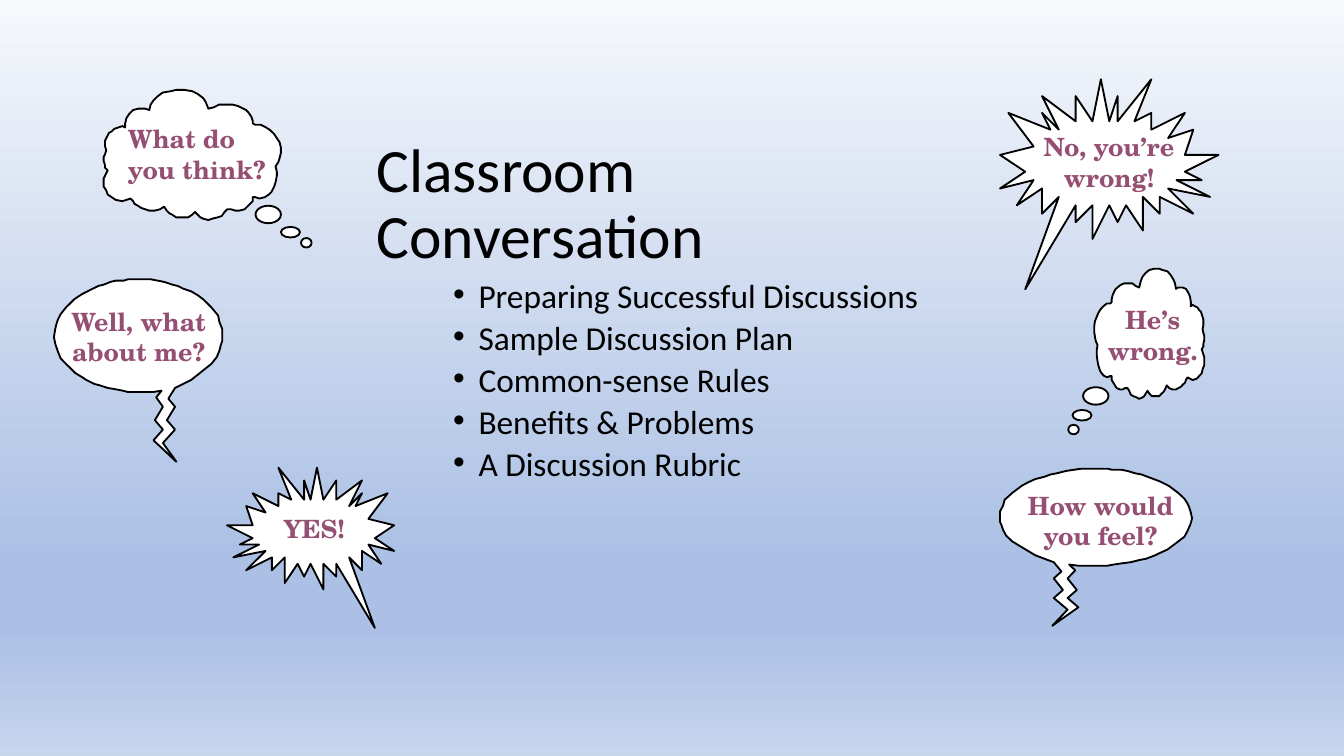
from dataclasses import dataclass

from lxml.etree import SubElement
from pptx import Presentation
from pptx.dml.color import RGBColor
from pptx.enum.shapes import MSO_SHAPE as Shape
from pptx.enum.text import MSO_ANCHOR as Anchor, MSO_AUTO_SIZE as AutoSize, PP_ALIGN as Align
from pptx.oxml.ns import qn
from pptx.util import Cm, Pt


@dataclass(frozen=True)
class Theme:
    ink: str = "000000"
    paper: str = "FFFFFF"
    speech: str = "954F72"
    sky: tuple = ((0, "F6F8FC"), (74, "ABC0E4"), (83, "ABC0E4"), (100, "C7D5ED"))
    main_font: str = "Calibri"
    speech_font: str = "TeX Gyre Schola"
    title_size: float = 33
    body_size: float = 17.9
    speech_size: float = 13.5
    outline: float = 1


@dataclass(frozen=True)
class Box:
    left: float
    top: float
    width: float
    height: float

    def emu(self) -> tuple:
        return Cm(self.left), Cm(self.top), Cm(self.width), Cm(self.height)


@dataclass(frozen=True)
class Bubble:
    outline: tuple
    box: Box
    mirrored: bool
    label: Box
    lines: tuple
    align: Align = Align.CENTER
    dots: tuple = ()


BURST = (
    (4, 8), (1, 4), (6, 6), (5, 4), (7, 6), (5, 2), (9, 5), (9, 2), (11, 5), (12, 0),
    (13, 5), (14, 2), (14, 5), (18, 0), (16, 5), (18, 4), (18, 6), (22, 4), (20, 7), (23, 6),
    (22, 9), (26, 9), (22, 11), (24, 12), (21, 12), (25, 14), (20, 13), (23, 16), (19, 14), (19, 16),
    (17, 14), (17, 18), (15, 15), (14, 17), (13, 15), (11, 19), (11, 15), (9, 17), (9, 15), (3, 25),
    (7, 14), (5, 16), (5, 13), (2, 15), (4, 12), (0, 13), (3, 11), (0, 9),
)
BALLOON = (
    (9, 21), (12, 18), (15, 15), (18, 13), (21, 11), (27, 8), (33, 5), (37, 4), (42, 2), (46, 1),
    (52, 1), (55, 0), (61, 0), (65, 0), (72, 0), (77, 1), (82, 2), (88, 4), (92, 5), (96, 7),
    (102, 9), (107, 12), (111, 15), (114, 18), (117, 21), (122, 27), (123, 32), (125, 37), (125, 41), (125, 46),
    (124, 49), (123, 53), (121, 58), (117, 63), (112, 67), (107, 71), (102, 75), (98, 77), (94, 79), (90, 81),
    (85, 89), (90, 95), (84, 105), (90, 112), (81, 122), (91, 136), (74, 120), (81, 112), (75, 105), (81, 95),
    (76, 88), (80, 83), (74, 84), (69, 84), (64, 84), (59, 84), (55, 84), (51, 83), (46, 82), (40, 81),
    (34, 79), (30, 78), (24, 75), (21, 73), (16, 70), (12, 66), (9, 63), (5, 59), (3, 54), (1, 48),
    (0, 43), (1, 37), (2, 33), (3, 30), (5, 26),
)
CLOUD = (
    (111, 23), (110, 20), (108, 17), (106, 15), (102, 13), (100, 12), (96, 11), (91, 11), (86, 11), (82, 13),
    (78, 14), (76, 9), (74, 6), (70, 3), (66, 1), (60, 0), (54, 0), (50, 1), (44, 2), (40, 5),
    (37, 8), (35, 11), (34, 15), (31, 14), (26, 14), (22, 15), (19, 18), (17, 21), (16, 25), (16, 28),
    (14, 27), (11, 28), (8, 29), (6, 31), (4, 32), (3, 34), (2, 36), (1, 38), (1, 42), (2, 45),
    (1, 48), (0, 50), (0, 53), (1, 56), (1, 58), (3, 60), (1, 64), (0, 66), (0, 72), (2, 75),
    (3, 78), (6, 80), (9, 82), (14, 83), (17, 82), (20, 81), (22, 83), (23, 85), (25, 86), (28, 88),
    (31, 89), (34, 90), (38, 90), (42, 89), (45, 87), (47, 90), (49, 92), (51, 93), (54, 95), (60, 95),
    (63, 95), (66, 93), (68, 91), (70, 93), (72, 95), (74, 96), (78, 97), (81, 96), (85, 95), (88, 94),
    (90, 91), (92, 89), (95, 89), (98, 90), (101, 90), (105, 89), (107, 87), (109, 85), (111, 83), (111, 80),
    (113, 80), (116, 81), (120, 80), (123, 78), (125, 76), (127, 72), (128, 69), (129, 64), (129, 61), (128, 57),
    (130, 54), (131, 51), (132, 47), (132, 43), (131, 39), (129, 36), (127, 33), (124, 30), (121, 28), (117, 26),
    (113, 26), (111, 25),
)
DOT_SIZES = ((0.48, 0.33), (0.36, 0.2), (0.2, 0.18))

BUBBLES = (
    Bubble(BURST, Box(18.9, 1.5, 4.13, 3.97), False,
           Box(19.51, 2.39, 2.9, 1.35), ("No, you’re", "wrong!")),
    Bubble(BURST, Box(4.29, 8.84, 3.16, 3.03), True,
           Box(5.18, 9.6, 1.55, 0.76), ("YES!",), Align.LEFT),
    Bubble(BALLOON, Box(1.02, 5.28, 3.18, 3.45), False,
           Box(1.12, 5.69, 3, 1.35), ("Well, what", "about me?")),
    Bubble(BALLOON, Box(18.9, 8.86, 3.63, 2.97), True,
           Box(19.2, 9.17, 3.2, 1.35), ("How would", "you feel?")),
    Bubble(CLOUD, Box(20.68, 5.08, 2.08, 2.46), True,
           Box(20.73, 5.66, 2.11, 1.35), ("He’s", "wrong."),
           dots=((20.47, 7.32), (20.27, 7.75), (20.19, 8.03))),
    Bubble(CLOUD, Box(1.96, 1.7, 3.35, 2.46), False,
           Box(2.24, 2.24, 3.05, 1.35), ("What do", "you think?"), Align.LEFT,
           dots=((4.83, 3.89), (5.31, 4.29), (5.69, 4.5))),
)
TOPICS = ("Preparing Successful Discussions", "Sample Discussion Plan", "Common-sense Rules",
          "Benefits & Problems", "A Discussion Rubric")
THEME = Theme()


def paint_background(s) -> None:
    fill = s.background.fill
    fill.gradient()
    fill.gradient_angle = 270
    stops = s.element.find(".//" + qn("a:gsLst"))
    for stop in list(stops):
        stops.remove(stop)
    for percent, color in THEME.sky:
        stop = SubElement(stops, qn("a:gs"), pos=str(percent * 1000))
        SubElement(stop, qn("a:srgbClr"), val=color)


def style_shape(sp) -> None:
    sp.shadow.inherit = False
    sp.fill.solid()
    sp.fill.fore_color.rgb = RGBColor.from_string(THEME.paper)
    sp.line.color.rgb = RGBColor.from_string(THEME.ink)
    sp.line.width = Pt(THEME.outline)


def style_font(p, name: str, size: float, color: str, bold: bool = False) -> None:
    p.font.name = name
    p.font.size = Pt(size)
    p.font.bold = bold
    p.font.color.rgb = RGBColor.from_string(color)


def draw_outline(s, bubble: Bubble) -> None:
    left, top, width, height = bubble.box.emu()
    columns = max(x for x, _ in bubble.outline)
    rows = max(y for _, y in bubble.outline)
    points = [(left + round(width * (columns - x if bubble.mirrored else x) / columns),
               top + round(height * y / rows)) for x, y in bubble.outline]
    builder = s.shapes.build_freeform(*points[0])
    builder.add_line_segments(points[1:], close=True)
    style_shape(builder.convert_to_shape())
    for dot, size in zip(bubble.dots, DOT_SIZES):
        style_shape(s.shapes.add_shape(Shape.OVAL, *Box(*dot, *size).emu()))


def draw_label(s, bubble: Bubble) -> None:
    tf = s.shapes.add_textbox(*bubble.label.emu()).text_frame
    tf.word_wrap = False
    tf.auto_size = AutoSize.SHAPE_TO_FIT_TEXT
    tf.margin_left = tf.margin_right = Cm(0.18)
    tf.margin_top = tf.margin_bottom = Cm(0.1)
    tf.text = "\n".join(bubble.lines)
    for p in tf.paragraphs:
        p.alignment = bubble.align
        style_font(p, THEME.speech_font, THEME.speech_size, THEME.speech, bold=True)


def fill_placeholder(sp, box: Box, lines: tuple, size: float, spacing: float, anchor: Anchor) -> None:
    sp.left, sp.top, sp.width, sp.height = box.emu()
    tf = sp.text_frame
    tf.auto_size = AutoSize.NONE
    tf.vertical_anchor = anchor
    tf.text = "\n".join(lines)
    for p in tf.paragraphs:
        p.alignment = Align.LEFT
        p.line_spacing = spacing
        style_font(p, THEME.main_font, size, THEME.ink)


def main() -> None:
    prs = Presentation()
    prs.slide_width, prs.slide_height = Cm(25.4), Cm(14.29)
    s = prs.slides.add_slide(prs.slide_layouts[1])
    paint_background(s)
    fill_placeholder(s.shapes.title, Box(6.86, 2.69, 11.75, 2.39), ("Classroom Conversation",),
                     THEME.title_size, 0.9, Anchor.MIDDLE)
    body = s.placeholders[1]
    fill_placeholder(body, Box(8.31, 5.28, 9.7, 4.29), TOPICS, THEME.body_size, 0.7, Anchor.TOP)
    for p in body.text_frame.paragraphs:
        p.space_before = Pt(7.5)
        pPr = p._p.get_or_add_pPr()
        pPr.set("marL", str(Cm(0.48)))
        pPr.set("indent", str(-Cm(0.48)))
    for bubble in BUBBLES:
        draw_outline(s, bubble)
    for bubble in BUBBLES:
        draw_label(s, bubble)
    prs.save("out.pptx")


if __name__ == "__main__":
    main()
